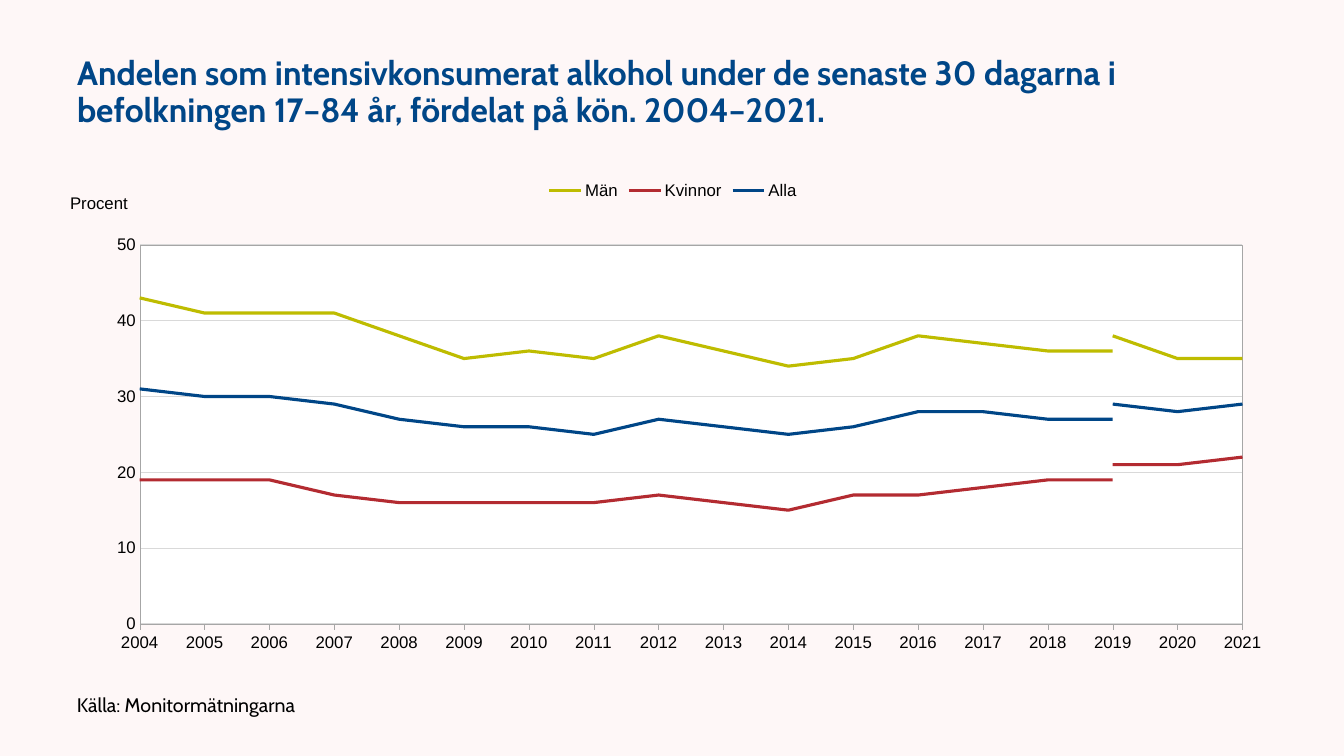
from dataclasses import dataclass

from lxml import etree
from pptx import Presentation
from pptx.chart.axis import ValueAxis
from pptx.chart.chart import Chart
from pptx.chart.data import CategoryChartData
from pptx.dml.color import RGBColor
from pptx.dml.line import LineFormat
from pptx.enum.chart import XL_CHART_TYPE as ChartType
from pptx.enum.chart import XL_LEGEND_POSITION as LegendPosition
from pptx.enum.chart import XL_TICK_MARK as TickMark
from pptx.enum.text import MSO_ANCHOR as Anchor
from pptx.enum.text import MSO_AUTO_SIZE as AutoSize
from pptx.enum.text import PP_ALIGN as Align
from pptx.oxml import parse_xml
from pptx.oxml.ns import nsdecls, qn
from pptx.text.text import Font, TextFrame
from pptx.util import Emu, Pt

COLORS = {
    "background": "FEF7F7",
    "blue": "004687",
    "olive": "BEBC00",
    "red": "B32B31",
    "black": "000000",
    "axis": "A6A6A6",
    "grid": "D9D9D9",
    "plot": "FFFFFF",
}
YEARS = range(2004, 2022)


@dataclass(frozen=True)
class Trend:
    name: str
    color: str
    first_year: int
    percent: tuple[int, ...]
    in_legend: bool = True

    def by_year(self) -> list[int | None]:
        known = dict(enumerate(self.percent, self.first_year))
        return [known.get(year) for year in YEARS]


# The series break in 2019, so each group has two lines
TRENDS = (
    Trend("Män", "olive", 2004,
          (43, 41, 41, 41, 38, 35, 36, 35, 38, 36, 34, 35, 38, 37, 36, 36)),
    Trend("Män", "olive", 2019, (38, 35, 35), in_legend=False),
    Trend("Kvinnor", "red", 2004,
          (19, 19, 19, 17, 16, 16, 16, 16, 17, 16, 15, 17, 17, 18, 19, 19)),
    Trend("Kvinnor", "red", 2019, (21, 21, 22), in_legend=False),
    Trend("Alla", "blue", 2004,
          (31, 30, 30, 29, 27, 26, 26, 25, 27, 26, 25, 26, 28, 28, 27, 27)),
    Trend("Alla", "blue", 2019, (29, 28, 29), in_legend=False),
)


def px(length: int) -> Emu:
    return Emu(round(length * 914400 / 100.8))


def rgb(name: str) -> RGBColor:
    return RGBColor.from_string(COLORS[name])


def style_font(font: Font, *, size: int = 12, family: str = "Arial",
               color: str = "black", bold: bool = False) -> None:
    font.size, font.name, font.bold = Pt(size), family, bold
    font.color.rgb = rgb(color)


def write_text(frame: TextFrame, text: str, *, spacing: float = 1.0,
               size: int = 12, family: str = "Arial",
               color: str = "black", bold: bool = False) -> None:
    para = frame.paragraphs[0]
    para.alignment, para.line_spacing = Align.LEFT, spacing
    span = para.add_run()
    span.text = text
    style_font(span.font, size=size, family=family, color=color, bold=bold)


def write_box(frame: TextFrame, text: str, *, size: int, color: str,
              bold: bool = False) -> None:
    frame.word_wrap, frame.auto_size = True, AutoSize.NONE
    frame.vertical_anchor = Anchor.MIDDLE
    write_text(frame, text, spacing=0.9, size=size, family="Cabin",
               color=color, bold=bold)


def style_line(line: LineFormat, color: str, width: float) -> None:
    line.color.rgb = rgb(color)
    line.width = Pt(width)


def set_layout(element: etree._Element, index: int,
               **settings: str | float) -> None:
    """Place a chart part by fractions of the chart's size."""
    old = element.find(qn("c:layout"))
    if old is not None:
        element.remove(old)
    parts = "".join(f'<c:{key} val="{val}"/>' for key, val in settings.items())
    element.insert(index, parse_xml(
        f'<c:layout {nsdecls("c")}><c:manualLayout>{parts}'
        "</c:manualLayout></c:layout>"))


def style_plot_area(chart: Chart) -> None:
    area = chart._chartSpace.find(".//" + qn("c:plotArea"))
    set_layout(area, 0, layoutTarget="inner", xMode="edge", yMode="edge",
               x=0.06, y=0.15, w=0.91, h=0.76)
    area.append(parse_xml(
        f'<c:spPr {nsdecls("c", "a")}>'
        f'<a:solidFill><a:srgbClr val="{COLORS["plot"]}"/></a:solidFill>'
        f'<a:ln w="{Pt(0.25)}"><a:solidFill>'
        f'<a:srgbClr val="{COLORS["axis"]}"/></a:solidFill></a:ln></c:spPr>'))


def style_value_axis(axis: ValueAxis) -> None:
    axis.minimum_scale, axis.maximum_scale, axis.major_unit = 0, 50, 10
    axis.major_tick_mark = TickMark.NONE
    axis.tick_labels.number_format = "0"
    axis.tick_labels.number_format_is_linked = False
    style_line(axis.major_gridlines.format.line, "grid", 0.75)
    # Lines start and end on the plot's edges
    axis._element.find(qn("c:crosses")).addnext(
        parse_xml(f'<c:crossBetween {nsdecls("c")} val="midCat"/>'))

    write_text(axis.axis_title.text_frame, "Procent")
    title = axis._element.find(qn("c:title"))
    title.find(".//" + qn("a:bodyPr")).set("rot", "0")
    set_layout(title, 1, xMode="edge", yMode="edge", x=0.0, y=0.04)


def style_legend(chart: Chart) -> None:
    chart.has_legend = True
    chart.legend.position = LegendPosition.TOP
    chart.legend.include_in_layout = False
    style_font(chart.legend.font)
    hidden = [i for i, trend in enumerate(TRENDS) if not trend.in_legend]
    for place, index in enumerate(hidden, 1):
        chart.legend._element.insert(place, parse_xml(
            f'<c:legendEntry {nsdecls("c")}><c:idx val="{index}"/>'
            '<c:delete val="1"/></c:legendEntry>'))


def style_chart(chart: Chart) -> None:
    chart.has_title = False
    style_font(chart.font)
    for axis in (chart.category_axis, chart.value_axis):
        axis.minor_tick_mark = TickMark.NONE
        style_font(axis.tick_labels.font)
        style_line(axis.format.line, "axis", 0.25)
    chart.category_axis.major_tick_mark = TickMark.OUTSIDE
    style_value_axis(chart.value_axis)
    chart.plots[0].vary_by_categories = False
    for series, trend in zip(chart.plots[0].series, TRENDS):
        series.smooth = False
        style_line(series.format.line, trend.color, 2.25)
    style_legend(chart)
    style_plot_area(chart)


def main() -> None:
    deck = Presentation()
    deck.slide_width, deck.slide_height = px(1344), px(756)
    page = deck.slides.add_slide(deck.slide_layouts[5])
    page.background.fill.solid()
    page.background.fill.fore_color.rgb = rgb("background")

    # Title
    title = page.shapes.title
    title.left, title.top = px(67), px(30)
    title.width, title.height = px(1210), px(126)
    write_box(title.text_frame,
              "Andelen som intensivkonsumerat alkohol under de senaste 30 "
              "dagarna i befolkningen 17–84 år, fördelat på kön. 2004–2021.",
              size=24, color="blue", bold=True)

    # Line chart
    data = CategoryChartData(number_format="0")
    data.categories = [str(year) for year in YEARS]
    for trend in TRENDS:
        data.add_series(trend.name, trend.by_year())
    frame = page.shapes.add_chart(
        ChartType.LINE, px(67), px(170), px(1212), px(499), data)
    style_chart(frame.chart)

    # Source line
    box = page.shapes.add_textbox(px(67), px(688), px(605), px(37))
    write_box(box.text_frame, "Källa: Monitormätningarna",
              size=14, color="black")

    deck.save("out.pptx")


if __name__ == "__main__":
    main()
